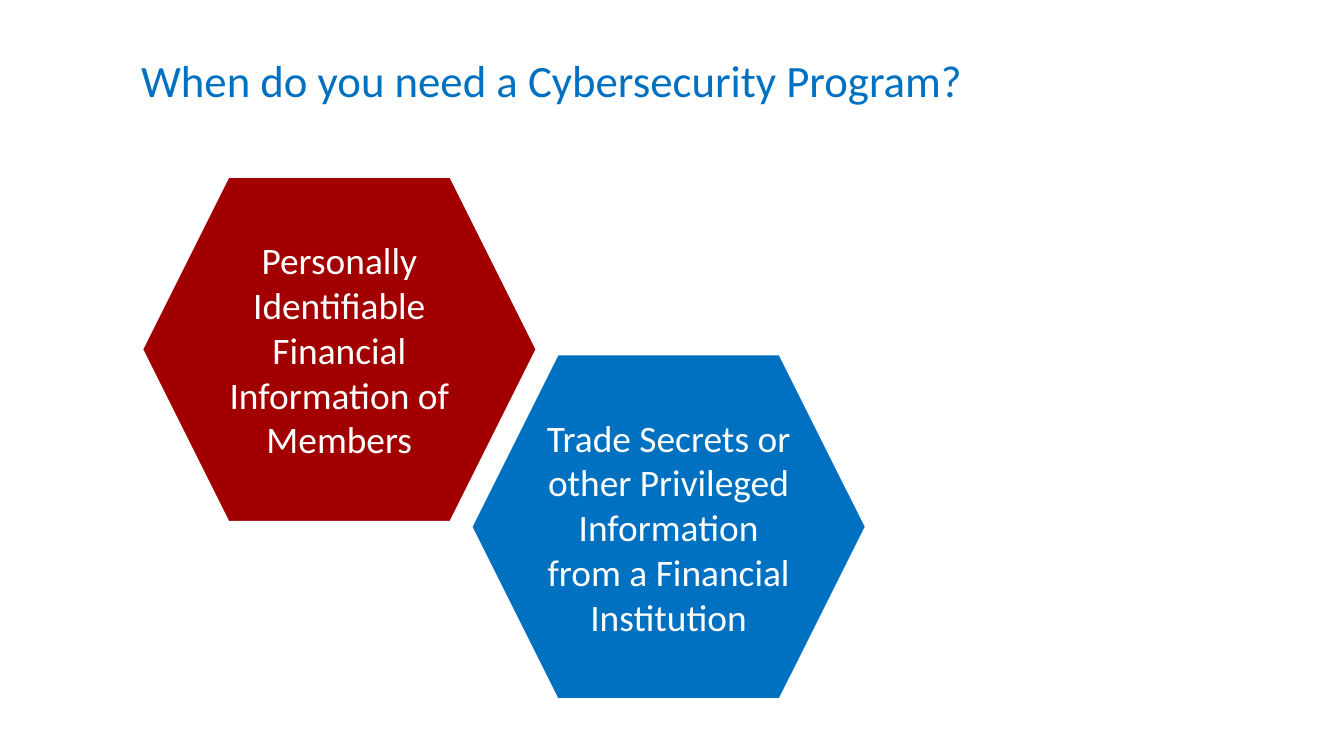
from pptx import Presentation
from pptx.dml.color import RGBColor
from pptx.enum.shapes import MSO_SHAPE as Preset
from pptx.enum.text import MSO_ANCHOR as Anchor, PP_ALIGN as Align
from pptx.util import Inches, Pt

RED = RGBColor(0xA2, 0x00, 0x00)
BLUE = RGBColor(0x00, 0x70, 0xC0)
WHITE = RGBColor(0xFF, 0xFF, 0xFF)

TITLE = "When do you need a Cybersecurity Program?"
REASONS = [
    ("Personally Identifiable Financial Information of Members", RED),
    ("Trade Secrets or other Privileged Information from a Financial Institution", BLUE),
]

SLIDE_WIDTH = 10
SLIDE_SIZE = (SLIDE_WIDTH, SLIDE_WIDTH * 9 / 16)
LEFT = 1.05
TITLE_BOX = (LEFT, 0.39, 8.2, 0.49)
FIRST_TOP = 1.31
HEXAGON_SIZE = (2.95, 2.58)
STEP = (2.45, 1.32)  # each hexagon nests to the lower right of the one before

TITLE_FORMAT = {"name": "Calibri", "size": Pt(24)}
REASON_FORMAT = {"name": "Calibri", "size": Pt(20)}


def write(frame, text, font_format, color, alignment, anchor):
    frame.word_wrap = True
    frame.vertical_anchor = anchor
    paragraph = frame.paragraphs[0]
    paragraph.alignment = alignment
    run = paragraph.add_run()
    run.text = text
    for attribute, value in font_format.items():
        setattr(run.font, attribute, value)
    run.font.color.rgb = color


def add_title(slide):
    title = slide.shapes.title
    title.left, title.top, title.width, title.height = map(Inches, TITLE_BOX)
    frame = title.text_frame
    for side in ("left", "top", "right", "bottom"):
        setattr(frame, f"margin_{side}", 0)
    write(frame, TITLE, TITLE_FORMAT, BLUE, Align.LEFT, Anchor.TOP)


def add_reason(slide, index, text, color):
    left = LEFT + index * STEP[0]
    top = FIRST_TOP + index * STEP[1]
    hexagon = slide.shapes.add_shape(Preset.HEXAGON, *map(Inches, (left, top, *HEXAGON_SIZE)))
    hexagon.shadow.inherit = False
    hexagon.fill.solid()
    hexagon.fill.fore_color.rgb = color
    hexagon.line.color.rgb = WHITE
    hexagon.line.width = Pt(2)
    write(hexagon.text_frame, text, REASON_FORMAT, WHITE, Align.CENTER, Anchor.MIDDLE)


def main():
    presentation = Presentation()
    presentation.slide_width, presentation.slide_height = map(Inches, SLIDE_SIZE)
    slide = presentation.slides.add_slide(presentation.slide_layouts[5])
    add_title(slide)
    for index, (text, color) in enumerate(REASONS):
        add_reason(slide, index, text, color)
    presentation.save("out.pptx")


if __name__ == "__main__":
    main()
